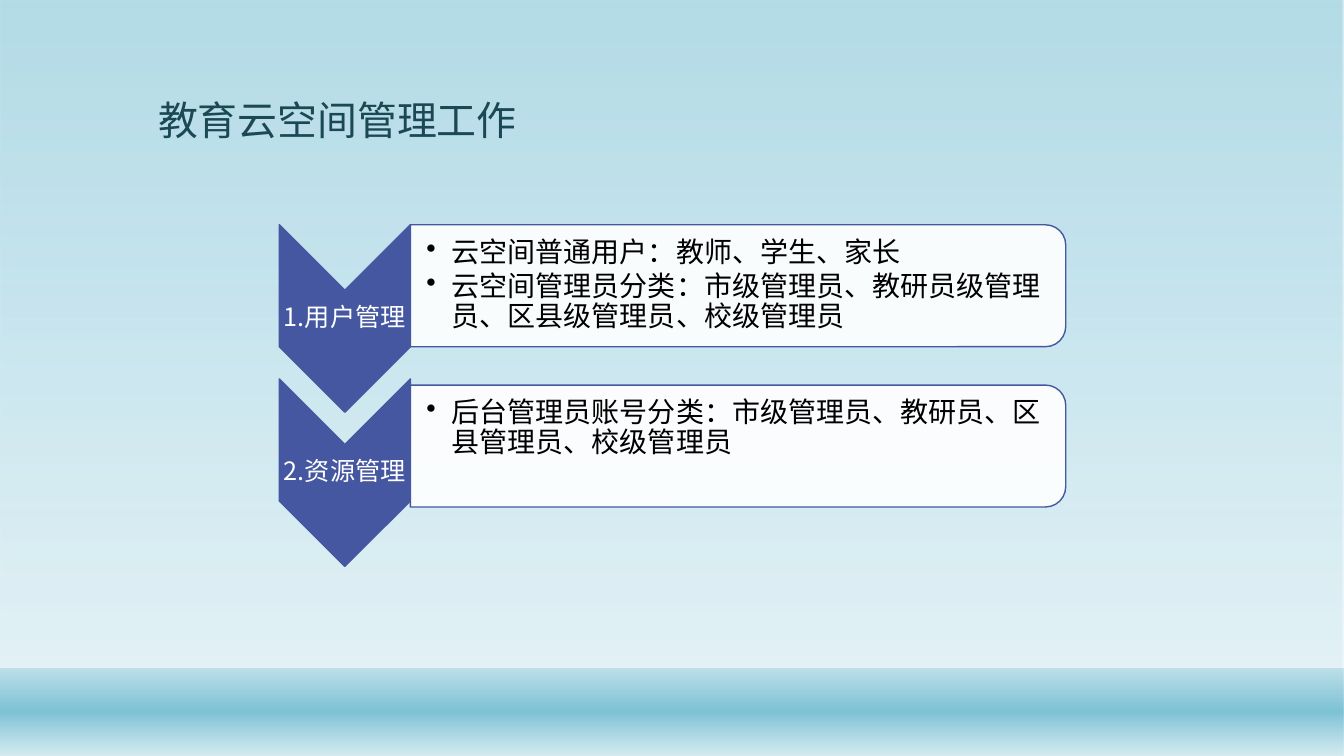
from dataclasses import dataclass

from lxml import etree
from pptx import Presentation
from pptx.dml.color import RGBColor
from pptx.enum.shapes import MSO_SHAPE
from pptx.enum.text import MSO_ANCHOR, PP_ALIGN
from pptx.oxml.ns import qn
from pptx.util import Inches, Pt

RECT, CHEVRON = MSO_SHAPE.RECTANGLE, MSO_SHAPE.CHEVRON
PANEL = MSO_SHAPE.ROUND_2_SAME_RECTANGLE
TOP, MIDDLE, BOTTOM = MSO_ANCHOR.TOP, MSO_ANCHOR.MIDDLE, MSO_ANCHOR.BOTTOM
LEFT, CENTER = PP_ALIGN.LEFT, PP_ALIGN.CENTER


@dataclass(frozen=True)
class Theme:
    font: str = "Noto Sans CJK SC"
    deep: str = "7DC2D6"
    pale: str = "D4EBF1"
    title: str = "1B4855"
    accent: str = "4557A1"
    white: str = "FFFFFF"
    black: str = "000000"
    title_size: float = 28.5
    label_size: float = 18
    body_size: float = 20


THEME = Theme()
ROWS = [
    ("1.用户管理", ["云空间普通用户：教师、学生、家长",
                "云空间管理员分类：市级管理员、教研员级管理员、区县级管理员、校级管理员"]),
    ("2.资源管理", ["后台管理员账号分类：市级管理员、教研员、区县管理员、校级管理员"]),
]


def add_alpha(color, percent):
    etree.SubElement(color, qn("a:alpha"), val=str(percent * 1000))


def add_shape(slide, kind, box, fill, line=None):
    shape = slide.shapes.add_shape(kind, *map(Inches, box))
    shape.shadow.inherit = False
    shape.fill.solid()
    shape.fill.fore_color.rgb = RGBColor.from_string(fill)
    if line:
        shape.line.color.rgb = RGBColor.from_string(line)
        shape.line.width = Pt(1)
    else:
        shape.line.fill.background()
    return shape


def add_turned(slide, kind, box, fill):
    """Place a shape turned a quarter clockwise so that it fills the box."""
    x, y, w, h = box
    flat = (x + (w - h) / 2, y + (h - w) / 2, h, w)
    shape = add_shape(slide, kind, flat, fill, THEME.accent)
    shape.rotation = 90
    return shape


def add_band(slide, box, stops):
    """Draw a rectangle that fades downwards; stops are (place, colour, alpha)."""
    band = add_shape(slide, RECT, box, THEME.pale)
    props = band._element.spPr
    solid = props.find(qn("a:solidFill"))
    grad = etree.Element(qn("a:gradFill"), rotWithShape="1")
    props.replace(solid, grad)
    items = etree.SubElement(grad, qn("a:gsLst"))
    for place, color, alpha in stops:
        stop = etree.SubElement(items, qn("a:gs"), pos=str(place * 1000))
        add_alpha(etree.SubElement(stop, qn("a:srgbClr"), val=color), alpha)
    etree.SubElement(grad, qn("a:lin"), ang="5400000", scaled="0")


def add_text(slide, box, lines, size, color, anchor, insets,
             align=LEFT, after=0, bullet=False):
    frame = slide.shapes.add_textbox(*map(Inches, box)).text_frame
    frame.word_wrap = True
    frame.vertical_anchor = anchor
    (frame.margin_left, frame.margin_top,
     frame.margin_right, frame.margin_bottom) = map(Inches, insets)
    frame.text = "\n".join(lines)
    for para in frame.paragraphs:
        para.alignment = align
        para.line_spacing = 0.9
        para.space_after = Pt(after)
        props = para._p.get_or_add_pPr()
        if bullet:
            props.set("marL", str(Inches(0.25)))
            props.set("indent", str(-Inches(0.25)))
            etree.SubElement(props, qn("a:buChar"), char="•")
        para.font.name = THEME.font
        para.font.size = Pt(size)
        para.font.color.rgb = RGBColor.from_string(color)
        etree.SubElement(props.find(qn("a:defRPr")), qn("a:ea"), typeface=THEME.font)


def add_back(slide, width, height):
    add_band(slide, (0, 0, width, height),
             [(0, THEME.deep, 58), (88, THEME.pale, 65)])
    foot = 0.87
    add_band(slide, (0, height - foot, width, foot),
             [(1, THEME.deep, 38), (49, THEME.deep, 100), (100, THEME.pale, 89)])


def add_title(slide, box):
    add_text(slide, box, ["教育云空间管理工作"], THEME.title_size, THEME.title,
             BOTTOM, (0.1, 0.05, 0.1, 0.05))


def add_step(slide, box, label):
    x, y, w, h = box
    add_turned(slide, CHEVRON, box, THEME.accent)
    add_text(slide, (x, y + w / 2, w, h - w), [label], THEME.label_size,
             THEME.white, MIDDLE, (0.01,) * 4, CENTER)


def add_panel(slide, box, lines):
    x, y, w, h = box
    panel = add_turned(slide, PANEL, box, THEME.white)
    add_alpha(panel._element.spPr.find(qn("a:solidFill"))[0], 90)
    add_text(slide, (x, y + 0.06, w - 0.06, h - 0.12), lines, THEME.body_size,
             THEME.black, TOP, (0.16, 0.07, 0.01, 0.01), after=3, bullet=True)


def add_list(slide, box):
    x, y, w, h = box
    step_w, step_h, panel_h = 1.3, 1.86, 1.21
    step_gap, panel_gap = h - step_h, 1.59
    for i, (label, lines) in enumerate(ROWS):
        add_step(slide, (x, y + i * step_gap, step_w, step_h), label)
        add_panel(slide, (x + step_w, y + i * panel_gap, w - step_w, panel_h), lines)


def main():
    deck = Presentation()
    width, height = 13.33, 7.5
    deck.slide_width, deck.slide_height = Inches(width), Inches(height)
    slide = deck.slides.add_slide(deck.slide_layouts[6])
    add_back(slide, width, height)
    add_title(slide, (1.47, 0.29, 10.4, 1.19))
    add_list(slide, (2.77, 2.23, 7.8, 3.39))
    deck.save("out.pptx")


if __name__ == "__main__":
    main()
